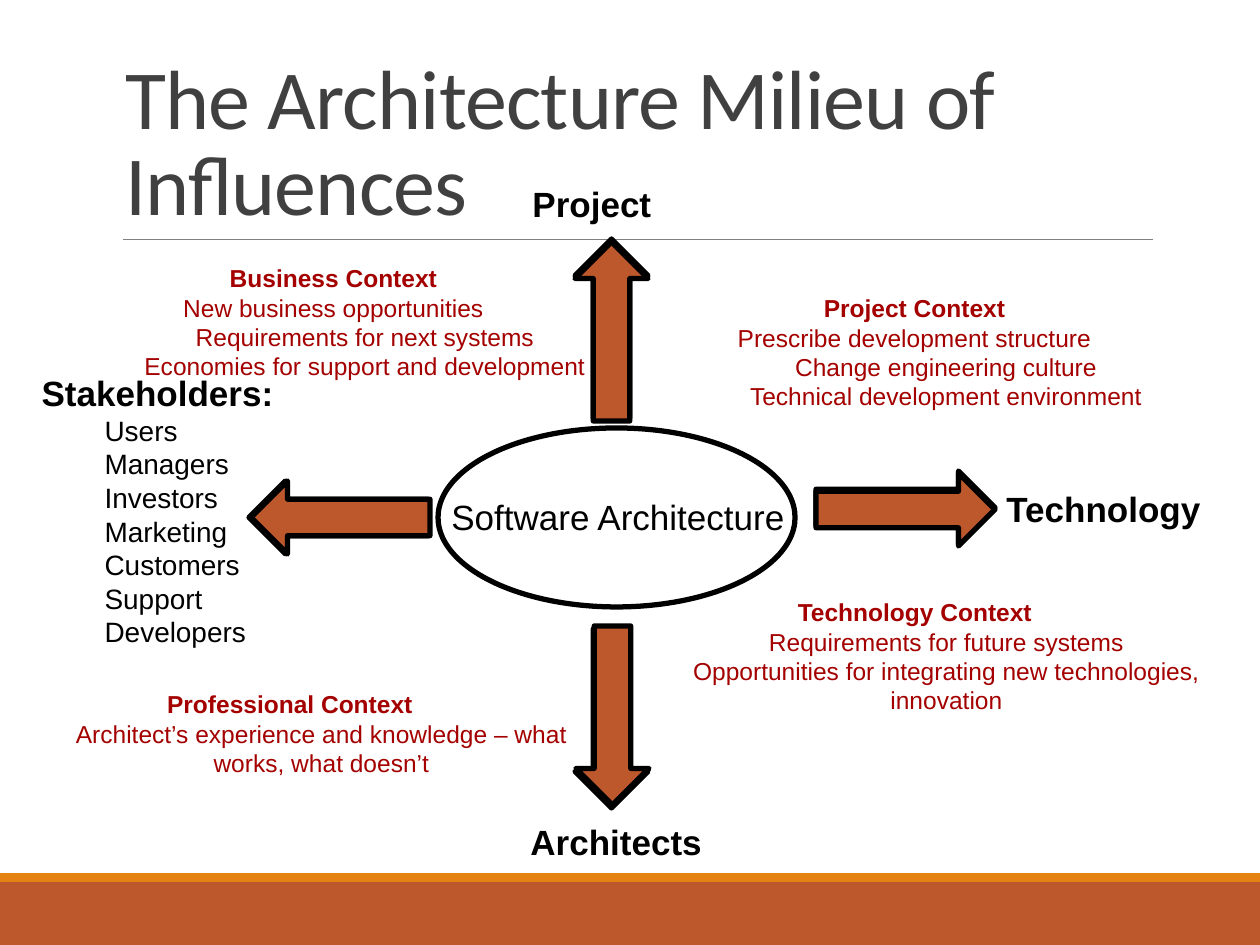
from lxml import etree
from pptx import Presentation
from pptx import util as u
from pptx.dml.color import RGBColor
from pptx.enum import shapes, text
from pptx.oxml.ns import qn

COLORS = {
    "rust": "BD582C", "orange": "E48312", "rule": "808080",
    "title": "404040", "black": "000000", "context": "A40000",
}
EMU_PER_PX = 914400 / 126
ARROW_SIZE = (73, 179)
INDENT = 63

STAKEHOLDERS = ["Users", "Managers", "Investors", "Marketing",
                "Customers", "Support", "Developers"]

# text, box
INFLUENCES = [
    ("Architects", (518, 814, 198, 55)),
    ("Technology", (994, 481, 222, 55)),
    ("Project", (520, 176, 145, 55)),
]

# heading, box, wrap, points as (level, text)
CONTEXTS = [
    ("Business Context", (-13, 257, 693, 131), True,
     [(0, "New business opportunities"),
      (1, "Requirements for next systems"),
      (1, "Economies for support and development")]),
    ("Professional Context", (-20, 683, 620, 102), True,
     [(1, "Architect’s experience and knowledge – what works, what doesn’t")]),
    ("Technology Context", (600, 591, 630, 131), True,
     [(1, "Requirements for future systems"),
      (1, "Opportunities for integrating new technologies, innovation")]),
    ("Project Context", (673, 287, 483, 131), False,
     [(0, "Prescribe development structure"),
      (1, "Change engineering culture"),
      (1, "Technical development environment")]),
]

# left, top, rotation from pointing down
OUTLINE_ARROWS = [(575, 629, 0), (575, 239, 180), (302, 428, 90), (869, 418, 270)]
FILLED_ARROWS = [(304, 428, 90), (575, 242, 180), (869, 420, 270), (576, 626, 0)]


def px(*lengths):
    return [u.Emu(round(length * EMU_PER_PX)) for length in lengths]


def rgb(name):
    return RGBColor.from_string(COLORS[name])


def write(frame, content, size=20, color="black", font="Arial", bold=False,
          align=text.PP_ALIGN.LEFT, level=0, spacing=1.0):
    """Add one unbulleted paragraph, using the empty first one if there is one."""
    paragraph = frame.paragraphs[0]
    if paragraph.runs:
        paragraph = frame.add_paragraph()
    paragraph.alignment, paragraph.level = align, level
    paragraph.line_spacing = spacing
    paragraph.space_before = u.Pt(0)
    properties = paragraph._p.get_or_add_pPr()
    properties.set("marL", str(px(INDENT * level)[0]))
    properties.set("indent", "0")
    etree.SubElement(properties, qn("a:buNone"))
    run = paragraph.add_run()
    run.text = content
    run.font.name, run.font.size, run.font.bold = font, u.Pt(size), bold
    run.font.color.rgb = rgb(color)
    return run


def place(shape, box):
    shape.left, shape.top, shape.width, shape.height = px(*box)


def add_text_box(slide, box, wrap=False):
    frame = slide.shapes.add_textbox(*px(*box)).text_frame
    frame.word_wrap = wrap
    frame.auto_size = text.MSO_AUTO_SIZE.SHAPE_TO_FIT_TEXT
    return frame


def add_shape(slide, kind, box, fill=None, outline=None, rotation=0):
    shape = slide.shapes.add_shape(kind, *px(*box))
    shape.shadow.inherit = False
    shape.rotation = rotation
    if fill:
        shape.fill.solid()
        shape.fill.fore_color.rgb = rgb(fill)
    else:
        shape.fill.background()
    if outline:
        shape.line.color.rgb = rgb(outline)
        shape.line.width = u.Pt(3)
    else:
        shape.line.fill.background()


def add_rule(slide, left, right, y):
    rule = slide.shapes.add_connector(
        shapes.MSO_CONNECTOR.STRAIGHT, *px(left, y, right, y))
    rule.line.color.rgb = rgb("rule")
    rule.line.width = u.Pt(0.5)
    etree.SubElement(rule._element.spPr, qn("a:effectLst"))


def add_title(slide, content):
    title = slide.shapes.title
    place(title, (113, 39, 1040, 200))
    frame = title.text_frame
    frame.auto_size = text.MSO_AUTO_SIZE.NONE
    frame.vertical_anchor = text.MSO_ANCHOR.BOTTOM
    run = write(frame, content, size=48, color="title", font="Calibri", spacing=0.85)
    run.font._element.set("spc", "-50")


def add_stakeholders(slide):
    body = slide.placeholders[1]
    place(body, (29, 365, 260, 292))
    frame = body.text_frame
    frame.word_wrap = False
    frame.auto_size = text.MSO_AUTO_SIZE.SHAPE_TO_FIT_TEXT
    write(frame, "Stakeholders:", bold=True)
    for stakeholder in STAKEHOLDERS:
        write(frame, stakeholder, size=16, level=1)


def add_context(slide, heading, box, wrap, points):
    frame = add_text_box(slide, box, wrap)
    style = {"size": 14, "color": "context", "align": text.PP_ALIGN.CENTER}
    write(frame, heading, bold=True, **style)
    for level, point in points:
        write(frame, point, level=level, **style)


def add_arrows(slide, arrows, fill=None):
    for left, top, rotation in arrows:
        add_shape(slide, shapes.MSO_SHAPE.DOWN_ARROW, (left, top, *ARROW_SIZE),
                  fill, "black", rotation)


def main():
    deck = Presentation()
    deck.slide_width, deck.slide_height = px(1260, 945)
    slide = deck.slides.add_slide(deck.slide_layouts[1])

    add_shape(slide, shapes.MSO_SHAPE.RECTANGLE, (0, 882, 1260, 63), "rust")
    add_shape(slide, shapes.MSO_SHAPE.RECTANGLE, (0, 873, 1260, 9), "orange")
    add_rule(slide, 123, 1153, 239)
    add_title(slide, "The Architecture Milieu of Influences")

    add_shape(slide, shapes.MSO_SHAPE.OVAL, (438, 428, 357, 179), outline="black")
    write(add_text_box(slide, (438, 489, 360, 55)), "Software Architecture",
          align=text.PP_ALIGN.CENTER)
    add_stakeholders(slide)
    for context in CONTEXTS:
        add_context(slide, *context)
    for influence, box in INFLUENCES:
        write(add_text_box(slide, box), influence, bold=True)
    add_arrows(slide, OUTLINE_ARROWS)
    add_arrows(slide, FILLED_ARROWS, "rust")

    deck.save("out.pptx")


if __name__ == "__main__":
    main()
